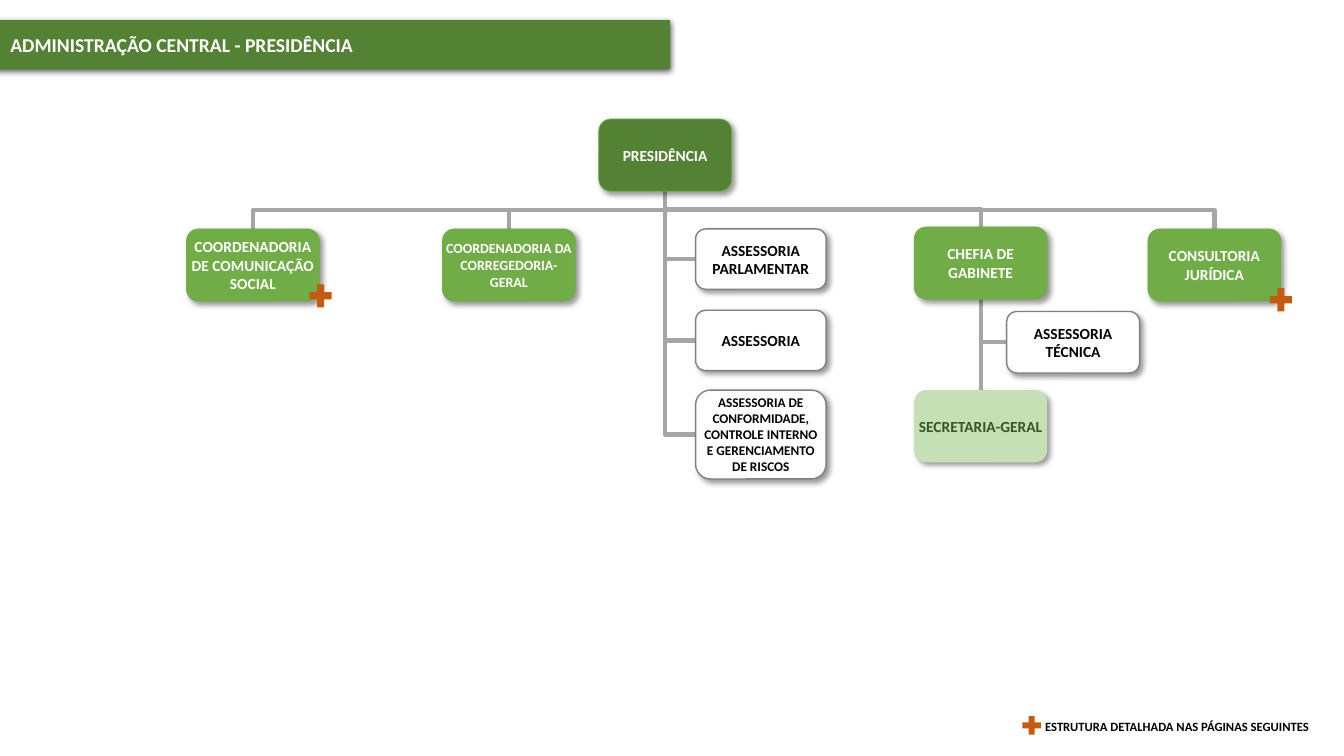
from dataclasses import dataclass

from lxml.etree import SubElement
from pptx import Presentation
from pptx.dml.color import RGBColor
from pptx.enum.shapes import MSO_CONNECTOR as Link, MSO_SHAPE as Preset
from pptx.enum.text import MSO_ANCHOR as Anchor, MSO_AUTO_SIZE as AutoSize, PP_ALIGN as Align
from pptx.oxml import parse_xml
from pptx.oxml.ns import nsdecls, qn
from pptx.util import Cm, Pt


@dataclass(frozen=True)
class Theme:
    font: str = "Calibri"
    dark: str = "548235"
    green: str = "70AD47"
    pale: str = "C5E0B4"
    pale_text: str = "385723"
    white: str = "FFFFFF"
    black: str = "000000"
    gray: str = "808080"
    link: str = "A6A6A6"
    plus: str = "C55A11"
    title_size: float = 14
    box_size: float = 11
    small_size: float = 10
    dense_size: float = 9.5
    legend_size: float = 9
    link_width: float = 3


@dataclass(frozen=True)
class BoxStyle:
    fill: str
    text: str
    border: str = ""
    border_width: float = 0


THEME = Theme()
HEAD = BoxStyle(THEME.dark, THEME.white, THEME.green, 0.5)
UNIT = BoxStyle(THEME.green, THEME.white, THEME.green, 0.5)
OFFICE = BoxStyle(THEME.pale, THEME.pale_text)
ADVISORY = BoxStyle(THEME.white, THEME.black, THEME.gray, 1)
TOP, LEFT, BOTTOM = 0, 1, 2
UNIT_SIZE = (3.35, 1.82)
ADVISORY_SIZE = (3.29, 1.52)


def paint(shape, fill, border="", width=0):
    shape.fill.solid()
    shape.fill.fore_color.rgb = RGBColor.from_string(fill)
    if border:
        shape.line.color.rgb = RGBColor.from_string(border)
        shape.line.width = Pt(width)
    else:
        shape.line.fill.background()


def add_shadow(shape, alpha, blur, distance, angle):
    properties = shape.element.spPr
    for effects in properties.findall(qn("a:effectLst")):
        properties.remove(effects)
    properties.append(parse_xml(
        f'<a:effectLst {nsdecls("a")}><a:outerShdw blurRad="{Pt(blur)}" dist="{Pt(distance)}" '
        f'dir="{angle * 60000}" algn="t" rotWithShape="0"><a:srgbClr val="{THEME.black}">'
        f'<a:alpha val="{alpha * 1000}"/></a:srgbClr></a:outerShdw></a:effectLst>'))


def write(shape, text, size, color, align, margins=(0, 0, 0, 0)):
    frame = shape.text_frame
    frame.text = text
    frame.word_wrap = True
    frame.auto_size = AutoSize.NONE
    frame.vertical_anchor = Anchor.MIDDLE
    frame.margin_left, frame.margin_top, frame.margin_right, frame.margin_bottom = map(Cm, margins)
    para = frame.paragraphs[0]
    para.alignment = align
    for span in para.runs:
        span.font.name = THEME.font
        span.font.size = Pt(size)
        span.font.bold = True
        span.font.color.rgb = RGBColor.from_string(color)


def format_title(page, text):
    title = page.shapes.title
    title.left, title.top, title.width, title.height = Cm(-0.61), Cm(0.51), Cm(17.5), Cm(1.24)
    outline = SubElement(title.element.spPr, qn("a:prstGeom"), prst="roundRect")
    SubElement(outline, qn("a:avLst"))
    paint(title, THEME.dark)
    add_shadow(title, 63, 4.5, 1.5, 90)
    write(title, text, THEME.title_size, THEME.white, Align.LEFT, (0.87, 0.13, 0.25, 0.13))


def add_box(page, text, left, top, style, size=UNIT_SIZE, text_size=THEME.box_size):
    box = page.shapes.add_shape(Preset.ROUNDED_RECTANGLE, Cm(left), Cm(top), *map(Cm, size))
    paint(box, style.fill, style.border, style.border_width)
    add_shadow(box, 40, 4, 3, 45)
    write(box, text, text_size, style.text, Align.CENTER)
    return box


def add_plus(page, left, top, width=0.76, height=0.79):
    plus = page.shapes.add_shape(Preset.MATH_PLUS, Cm(left), Cm(top), Cm(width), Cm(height))
    plus.shadow.inherit = False
    paint(plus, THEME.plus)


def add_link(page, parent, child, side=TOP):
    start_x, start_y = parent.left + parent.width // 2, parent.top + parent.height
    if side == TOP:
        end_x, end_y = child.left + child.width // 2, child.top
    else:
        end_x, end_y = child.left, child.top + child.height // 2
    straight = start_x == end_x
    kind = Link.STRAIGHT if straight else Link.ELBOW
    link = page.shapes.add_connector(kind, start_x, start_y, end_x, end_y)
    link.begin_connect(parent, BOTTOM)
    link.end_connect(child, side)
    link.line.color.rgb = RGBColor.from_string(THEME.link)
    link.line.width = Pt(THEME.link_width)
    properties = link.element.spPr
    SubElement(properties, qn("a:effectLst"))
    if not straight:
        turn_link(link, start_x, start_y, end_x, end_y)
    if side == LEFT:
        properties.find(qn("a:prstGeom")).set("prst", "bentConnector2")
    page.shapes.element.insert(2, link.element)


def turn_link(link, start_x, start_y, end_x, end_y):
    rightward = end_x > start_x
    link.width, link.height = end_y - start_y, abs(end_x - start_x)
    link.left = (start_x + end_x - link.width) // 2
    link.top = (start_y + end_y - link.height) // 2
    frame = link.element.spPr.find(qn("a:xfrm"))
    frame.set("rot", str((270 if rightward else 90) * 60000))
    frame.set("flipH", "1" if rightward else "0")


def add_legend(page, text):
    add_plus(page, 25.68, 17.96, 0.64, 0.64)
    legend = page.shapes.add_textbox(Cm(26.01), Cm(17.98), Cm(7.87), Cm(0.64))
    write(legend, text, THEME.legend_size, THEME.black, Align.LEFT, (0.33, 0.13, 0.25, 0.13))


def main():
    deck = Presentation()
    deck.slide_width, deck.slide_height = Cm(33.87), Cm(19.05)
    page = deck.slides.add_slide(deck.slide_layouts[5])
    format_title(page, "ADMINISTRAÇÃO CENTRAL - PRESIDÊNCIA")

    presidency = add_box(page, "PRESIDÊNCIA", 15.09, 3, HEAD)
    cabinet = add_box(page, "CHEFIA DE GABINETE", 23.04, 5.72, UNIT)
    units = [
        ("COORDENADORIA DE COMUNICAÇÃO SOCIAL", 4.7, THEME.box_size),
        ("COORDENADORIA DA CORREGEDORIA-GERAL", 11.15, THEME.small_size),
        ("CONSULTORIA JURÍDICA", 28.93, THEME.box_size),
    ]
    for name, left, text_size in units:
        add_link(page, presidency, add_box(page, name, left, 5.77, UNIT, text_size=text_size))
    add_link(page, presidency, cabinet)

    advisories = [
        ("ASSESSORIA PARLAMENTAR", 5.77, ADVISORY_SIZE, THEME.box_size),
        ("ASSESSORIA", 7.82, ADVISORY_SIZE, THEME.box_size),
        ("ASSESSORIA DE CONFORMIDADE, CONTROLE INTERNO E GERENCIAMENTO DE RISCOS",
         9.83, (3.29, 2.24), THEME.dense_size),
    ]
    for name, top, size, text_size in advisories:
        advisory = add_box(page, name, 17.53, top, ADVISORY, size, text_size)
        add_link(page, presidency, advisory, LEFT)

    technical = add_box(page, "ASSESSORIA TÉCNICA", 25.37, 7.85, ADVISORY, (3.35, 1.55))
    add_link(page, cabinet, technical, LEFT)
    add_link(page, cabinet, add_box(page, "SECRETARIA-GERAL", 23.04, 9.83, OFFICE))

    add_plus(page, 7.7, 7.06)
    add_plus(page, 31.9, 7.16)
    add_legend(page, "ESTRUTURA DETALHADA NAS PÁGINAS SEGUINTES")
    deck.save("out.pptx")


if __name__ == "__main__":
    main()
